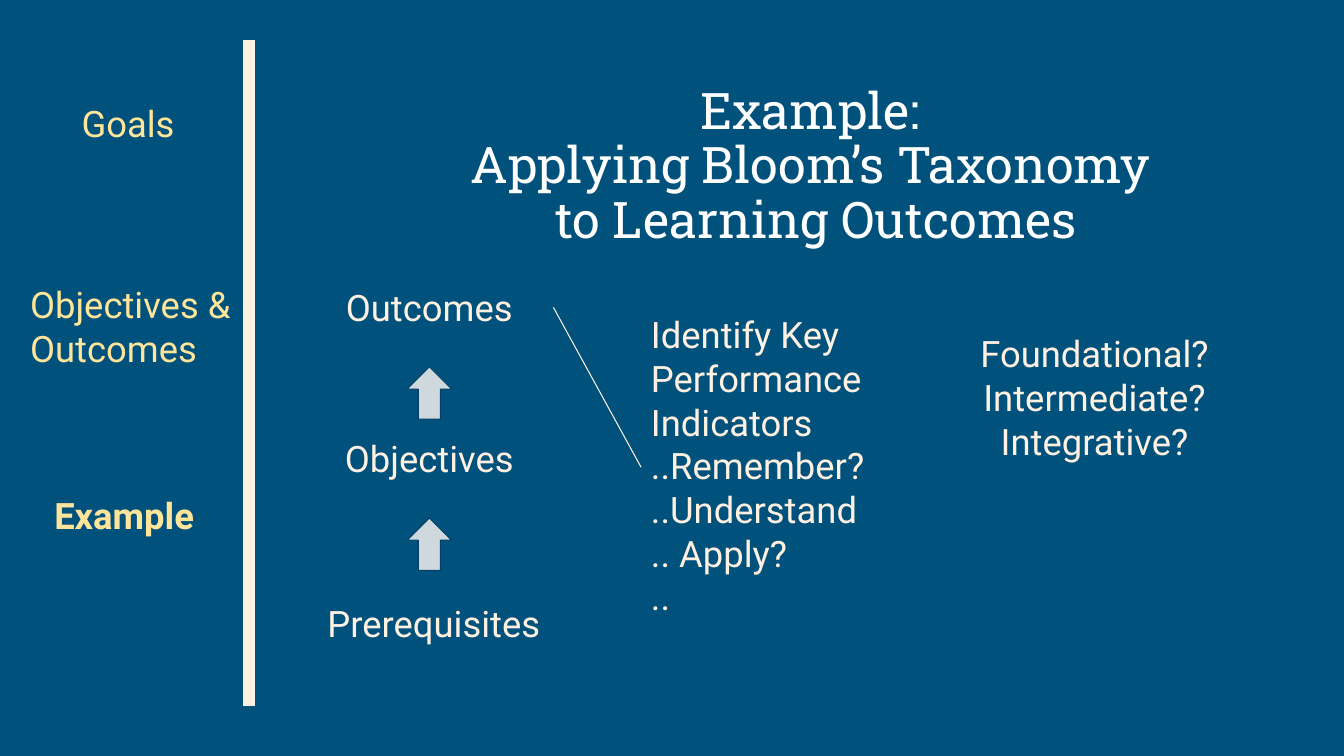
from dataclasses import dataclass

from lxml.etree import SubElement
from pptx import Presentation
from pptx.dml.color import RGBColor as Rgb
from pptx.enum.shapes import MSO_CONNECTOR as Connector, MSO_SHAPE as Preset
from pptx.enum.text import MSO_ANCHOR as Anchor, MSO_AUTO_SIZE as AutoSize, PP_ALIGN as Align
from pptx.oxml.ns import qn
from pptx.util import Inches, Pt

WIDTH, HEIGHT = Inches(13.333), Inches(7.5)


@dataclass(frozen=True)
class Theme:
    background: str = "00517C"
    cream: str = "FFF1E2"
    yellow: str = "FFE599"
    white: str = "FFFFFF"
    arrow_fill: str = "CFD8DC"
    arrow_edge: str = "004065"
    body_font: str = "Roboto"
    title_font: str = "Roboto Slab"
    body_size: int = 26
    title_size: int = 36
    thin: float = 0.75
    thick: float = 9


THEME = Theme()


def across(percent):
    return round(WIDTH * percent / 100)


def down(percent):
    return round(HEIGHT * percent / 100)


def area(left, top, width, height):
    """Turn percentages of the slide into a position and a size."""
    return across(left), down(top), across(width), down(height)


def apply(target, formats):
    for name, value in formats.items():
        setattr(target, name, value)


def add_text(slide, place, lines, color=THEME.cream, align=Align.LEFT, bold=False,
             font=THEME.body_font, size=THEME.body_size, frame_formats=None, spacing=None):
    box = slide.shapes.add_textbox(*area(*place))
    margin = Inches(0.1)
    frame = {"word_wrap": True, "auto_size": AutoSize.SHAPE_TO_FIT_TEXT,
             "margin_left": margin, "margin_right": margin,
             "margin_top": margin, "margin_bottom": margin}
    apply(box.text_frame, frame | (frame_formats or {}))
    box.text_frame.text = "\n".join(lines)
    for paragraph in box.text_frame.paragraphs:
        apply(paragraph, {"alignment": align, "line_spacing": spacing})
        for run in paragraph.runs:
            apply(run.font, {"name": font, "size": Pt(size), "bold": bold})
            run.font.color.rgb = Rgb.from_string(color)
    return box


def add_up_arrow(slide, place):
    arrow = slide.shapes.add_shape(Preset.UP_ARROW, *area(*place))
    arrow.shadow.inherit = False
    arrow.fill.solid()
    arrow.fill.fore_color.rgb = Rgb.from_string(THEME.arrow_fill)
    arrow.line.color.rgb = Rgb.from_string(THEME.arrow_edge)
    arrow.line.width = Pt(THEME.thin)


def add_line(slide, start, end, weight):
    line = slide.shapes.add_connector(
        Connector.STRAIGHT, across(start[0]), down(start[1]), across(end[0]), down(end[1]))
    line.line.color.rgb = Rgb.from_string(THEME.cream)
    line.line.width = Pt(weight)
    SubElement(line._element.spPr, qn("a:effectLst"))
    return line


def add_title(slide):
    margin = Inches(0.05)
    add_text(slide, (28.35, 12, 64.8, 20.27),
             ["Example: ", "Applying Bloom’s Taxonomy ", "to Learning Outcomes"],
             color=THEME.white, align=Align.CENTER, spacing=0.9,
             font=THEME.title_font, size=THEME.title_size,
             frame_formats={"auto_size": AutoSize.NONE, "vertical_anchor": Anchor.MIDDLE,
                            "margin_top": margin, "margin_bottom": margin})


def add_navigation(slide):
    sections = [
        ("Goals", (5.33, 12, 9.45, 8.53), False),
        ("Objectives & Outcomes", (1.5, 36, 17.03, 14.4), False),
        ("Example", (3.3, 63.87, 13.43, 8.53), True),
    ]
    for label, place, current in sections:
        add_text(slide, place, [label], color=THEME.yellow, bold=current)
    add_line(slide, (18.53, 5.33), (18.53, 93.33), THEME.thick)


def add_stages(slide):
    """Stack the stages with an up arrow below each; return the top one."""
    add_text(slide, (23.63, 78.13, 18.45, 8.53), ["Prerequisites"])
    stages = []
    for row, label in enumerate(["Outcomes", "Objectives"]):
        top = 36.4 + 20 * row
        stages.append(add_text(slide, (22.73, top, 18.45, 8.53), [label], align=Align.CENTER))
        add_up_arrow(slide, (30.3, top + 12.13, 3.3, 6.93))
    return stages[0]


def main():
    deck = Presentation()
    apply(deck, {"slide_width": WIDTH, "slide_height": HEIGHT})
    slide = deck.slides.add_slide(deck.slide_layouts[6])
    slide.background.fill.solid()
    slide.background.fill.fore_color.rgb = Rgb.from_string(THEME.background)

    add_title(slide)
    outcomes = add_stages(slide)

    # Performance indicators, linked to the outcomes
    indicators = add_text(
        slide, (47.7, 40, 18.45, 43.6),
        ["Identify Key Performance Indicators", "..Remember?", "..Understand",
         ".. Apply?", ".."])
    link = add_line(slide, (41.18, 40.67), (47.7, 61.8), THEME.thin)
    link.begin_connect(outcomes, 3)
    link.end_connect(indicators, 1)

    # Levels of learning
    add_text(slide, (70.8, 42.53, 21.3, 20.27),
             ["Foundational? Intermediate? Integrative?"], align=Align.CENTER)

    add_navigation(slide)
    deck.save("out.pptx")


if __name__ == "__main__":
    main()
